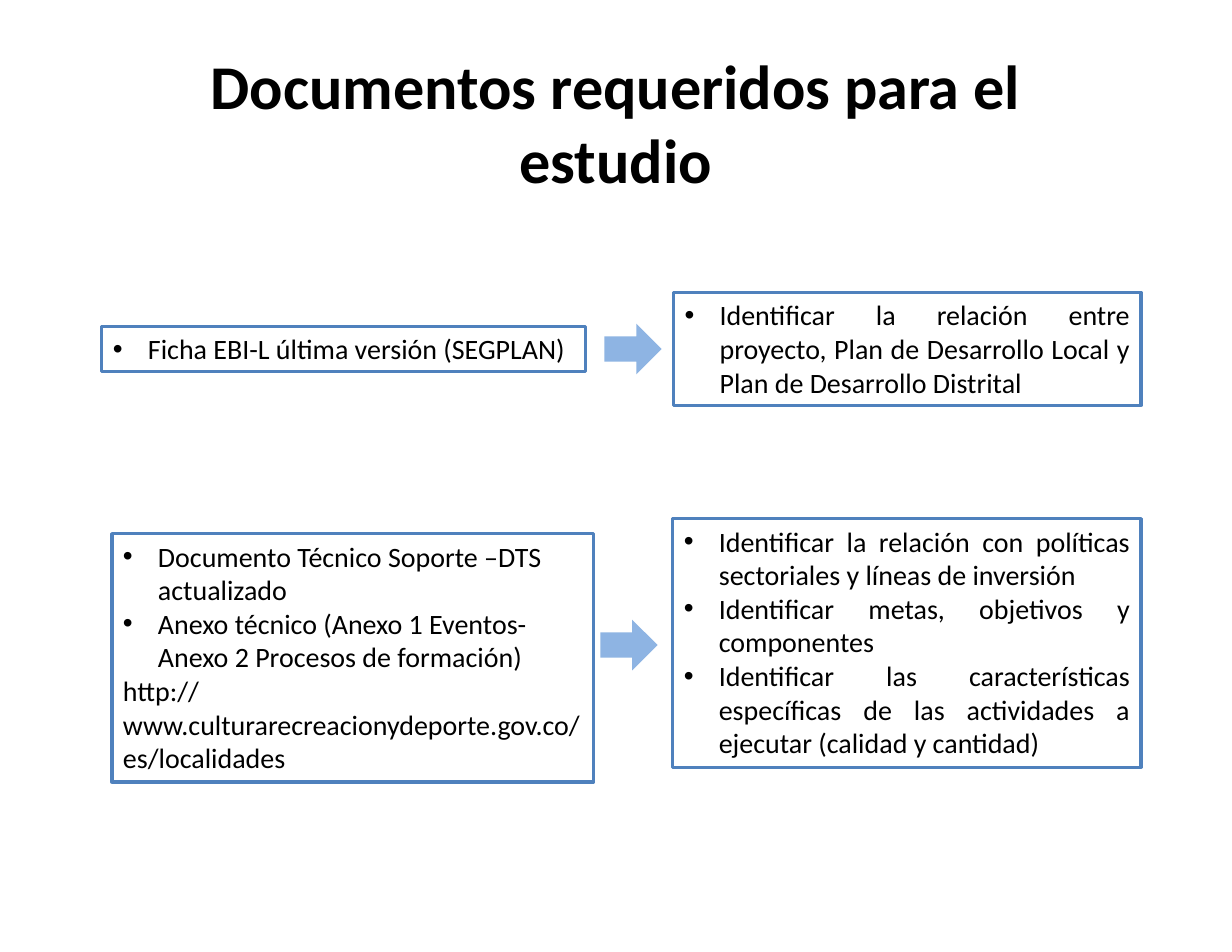
from pptx import Presentation
from pptx import util as u
from pptx.dml import color
from pptx.enum import shapes, text
from pptx.oxml import ns
from lxml import etree

FONT = "Calibri"
BLACK, WHITE, BORDER, ARROW = "000000", "FFFFFF", "4F81BD", "8EB4E3"
INDENT = 22.5


def paint(fill, value):
    fill.solid()
    fill.fore_color.rgb = color.RGBColor.from_string(value)


def add_run(paragraph, content, size, bold=False):
    run = paragraph.add_run()
    run.text = content
    run.font.name = FONT
    run.font.size = u.Pt(size)
    run.font.bold = bold
    paint(run.font.fill, BLACK)


def add_bullet(paragraph):
    properties = paragraph._p.get_or_add_pPr()
    properties.set("marL", str(u.Pt(INDENT)))
    properties.set("indent", str(-u.Pt(INDENT)))
    font = etree.SubElement(properties, ns.qn("a:buFont"))
    font.set("typeface", "Arial")
    bullet = etree.SubElement(properties, ns.qn("a:buChar"))
    bullet.set("char", "•")


def add_title(slide, left, top, width, height, content):
    shape = slide.shapes.add_textbox(*map(u.Pt, (left, top, width, height)))
    frame = shape.text_frame
    frame.word_wrap = True
    frame.vertical_anchor = text.MSO_ANCHOR.MIDDLE
    paragraph = frame.paragraphs[0]
    paragraph.alignment = text.PP_ALIGN.CENTER
    add_run(paragraph, content, 40, bold=True)


def add_preset(slide, kind, left, top, width, height, fill):
    shape = slide.shapes.add_shape(kind, *map(u.Pt, (left, top, width, height)))
    shape.shadow.inherit = False
    paint(shape.fill, fill)
    shape.line.fill.background()
    return shape


def add_box(slide, left, top, width, height, items, link=None,
            alignment=text.PP_ALIGN.JUSTIFY):
    shape = add_preset(slide, shapes.MSO_SHAPE.RECTANGLE, left, top, width, height, WHITE)
    paint(shape.line.fill, BORDER)
    shape.line.width = u.Pt(2)
    frame = shape.text_frame
    frame.word_wrap = True
    frame.vertical_anchor = text.MSO_ANCHOR.TOP
    lines = items + ([link] if link else [])
    for index, content in enumerate(lines):
        paragraph = frame.add_paragraph() if index else frame.paragraphs[0]
        paragraph.alignment = alignment
        if content != link:
            add_bullet(paragraph)
        add_run(paragraph, content, 18)


def add_arrow(slide, left, top):
    add_preset(slide, shapes.MSO_SHAPE.RIGHT_ARROW, left, top, 36.7, 32.5, ARROW)


def main():
    presentation = Presentation()
    presentation.slide_width = u.Pt(792)
    presentation.slide_height = u.Pt(612)
    slide = presentation.slides.add_slide(presentation.slide_layouts[6])

    add_title(slide, 67, 26, 657.5, 104.5, "Documentos requeridos para el estudio")

    add_box(slide, 65.5, 209.8, 311, 29, ["Ficha EBI-L última versión (SEGPLAN)"])
    add_box(slide, 72, 343, 309.6, 159.8, [
        "Documento Técnico Soporte –DTS actualizado",
        "Anexo técnico (Anexo 1 Eventos- Anexo 2 Procesos de formación)",
    ], link="http://www.culturarecreacionydeporte.gov.co/es/localidades",
        alignment=text.PP_ALIGN.LEFT)
    add_box(slide, 432.5, 333.4, 301, 159.8, [
        "Identificar la relación con políticas sectoriales y líneas de inversión",
        "Identificar metas, objetivos y componentes",
        "Identificar las características específicas de las actividades a ejecutar "
        "(calidad y cantidad)",
    ])
    add_box(slide, 433, 188, 300.5, 72.7, [
        "Identificar la relación entre proyecto, Plan de Desarrollo Local y "
        "Plan de Desarrollo Distrital",
    ])

    add_arrow(slide, 388.6, 208.1)
    add_arrow(slide, 386, 398.4)
    presentation.save("out.pptx")


if __name__ == "__main__":
    main()
